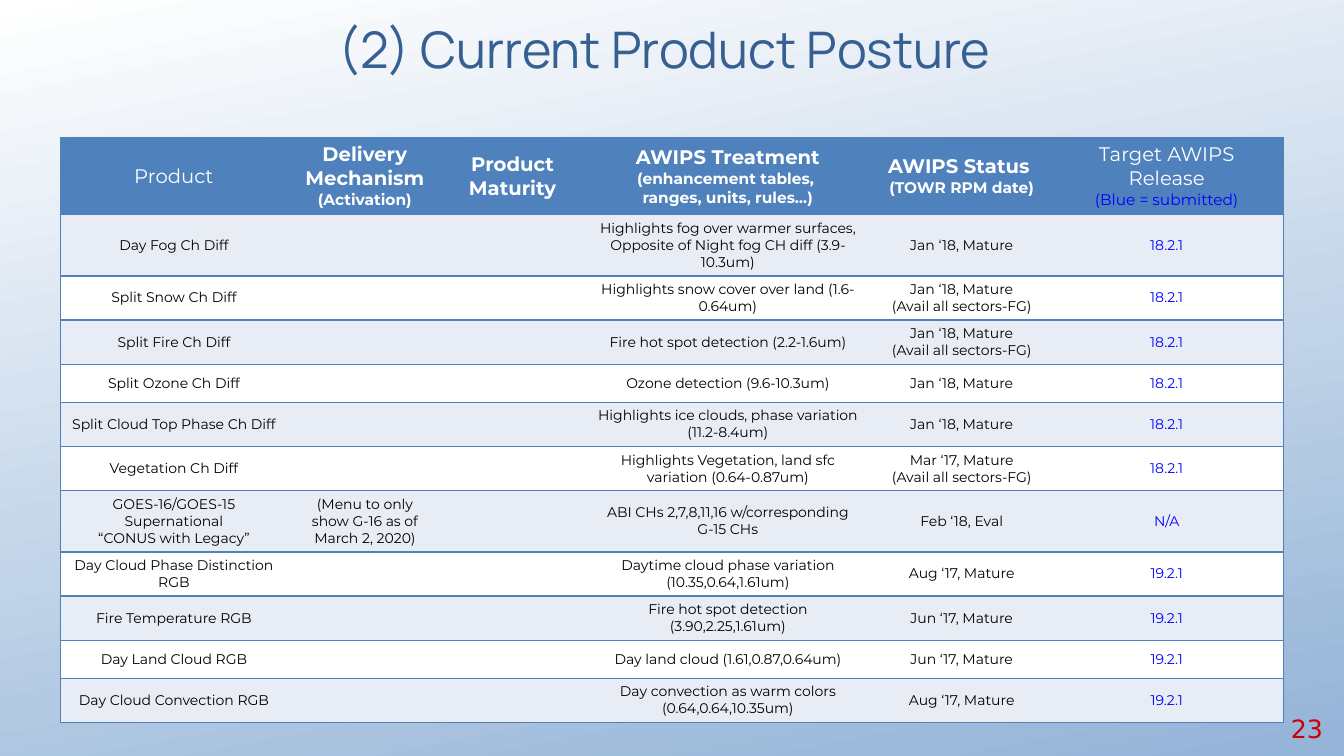
from dataclasses import dataclass

from lxml.etree import SubElement
from pptx import Presentation
from pptx.dml.color import RGBColor
from pptx.enum.text import MSO_ANCHOR, PP_ALIGN
from pptx.oxml.ns import qn
from pptx.slide import Slide
from pptx.table import Table, _Cell
from pptx.util import Pt

WHITE = RGBColor(0xFF, 0xFF, 0xFF)
BLACK = RGBColor(0, 0, 0)
BLUE = RGBColor(0x4F, 0x81, 0xBD)
PALE_BLUE = RGBColor(0xE8, 0xEC, 0xF4)
SKY_BLUE = RGBColor(0x93, 0xB3, 0xD7)
TITLE_BLUE = RGBColor(0x37, 0x60, 0x92)
SUBMITTED_BLUE = RGBColor(0, 0, 0xFF)
RED = RGBColor(0xCC, 0, 0)

TABLE_FONT = "Montserrat"
COLUMN_WIDTHS = (162, 110.9, 100.1, 207.4, 126.7, 166.3)
HEADER_HEIGHT = 55
ROW_HEIGHTS = {1: 27.4, 2: 31.4, 3: 43.8}  # by number of text lines


@dataclass
class Heading:
    main: str
    detail: str = ""
    bold: bool = True
    same_paragraph: bool = False
    detail_color: RGBColor = WHITE


@dataclass
class Product:
    name: str
    treatment: str
    status: str
    release: str
    lines: int = 2
    delivery: str = ""

    def values(self) -> tuple[str, ...]:
        return self.name, self.delivery, "", self.treatment, self.status, self.release


HEADINGS = (
    Heading("Product", bold=False),
    Heading("Delivery Mechanism", "(Activation)"),
    Heading("Product Maturity"),
    Heading("AWIPS Treatment ", "(enhancement tables, \vranges, units, rules…)",
            same_paragraph=True),
    Heading("AWIPS Status ", "(TOWR RPM date)"),
    Heading("Target AWIPS Release", "(Blue = submitted)", bold=False,
            detail_color=SUBMITTED_BLUE),
)
PRODUCTS = (
    Product("Day Fog Ch Diff",
            "Highlights fog over warmer surfaces, Opposite of Night fog CH diff (3.9-10.3um)",
            "Jan ‘18, Mature", "18.2.1", lines=3),
    Product("Split Snow Ch Diff", "Highlights snow cover over land (1.6-0.64um)",
            "Jan ‘18, Mature\n(Avail all sectors-FG)", "18.2.1"),
    Product("Split Fire Ch Diff", "Fire hot spot detection (2.2-1.6um)",
            "Jan ‘18, Mature\n(Avail all sectors-FG)", "18.2.1"),
    Product("Split Ozone Ch Diff", "Ozone detection (9.6-10.3um)",
            "Jan ‘18, Mature", "18.2.1", lines=1),
    Product("Split Cloud Top Phase Ch Diff",
            "Highlights ice clouds, phase variation (11.2-8.4um)",
            "Jan ‘18, Mature", "18.2.1"),
    Product("Vegetation Ch Diff", "Highlights Vegetation, land sfc variation (0.64-0.87um)",
            "Mar ‘17, Mature\n(Avail all sectors-FG)", "18.2.1"),
    Product("GOES-16/GOES-15 Supernational\v“CONUS with Legacy”",
            "ABI CHs 2,7,8,11,16 w/corresponding G-15 CHs", "Feb ‘18, Eval", "N/A",
            lines=3, delivery="(Menu to only show G-16 as of March 2, 2020)"),
    Product("Day Cloud Phase Distinction RGB",
            "Daytime cloud phase variation (10.35,0.64,1.61um)", "Aug ‘17, Mature", "19.2.1"),
    Product("Fire Temperature RGB", "Fire hot spot detection (3.90,2.25,1.61um)",
            "Jun ‘17, Mature", "19.2.1"),
    Product("Day Land Cloud RGB", "Day land cloud (1.61,0.87,0.64um)",
            "Jun ‘17, Mature", "19.2.1", lines=1),
    Product("Day Cloud Convection RGB",
            "Day convection as warm colors (0.64,0.64,10.35um)", "Aug ‘17, Mature", "19.2.1"),
)


def format_cell(cell: _Cell, fill: RGBColor, column: int) -> None:
    """Fill the cell and rule it above, below and on the table's outer sides."""
    cell.vertical_anchor = MSO_ANCHOR.MIDDLE
    properties = cell._tc.get_or_add_tcPr()
    ruled = {"L": column == 0, "R": column == len(COLUMN_WIDTHS) - 1, "T": True, "B": True}
    for side, visible in ruled.items():
        line = SubElement(properties, qn(f"a:ln{side}"), w=str(Pt(1)))
        if visible:
            solid = SubElement(line, qn("a:solidFill"))
            SubElement(solid, qn("a:srgbClr"), val=str(BLUE))
        else:
            SubElement(line, qn("a:noFill"))
    cell.fill.solid()
    cell.fill.fore_color.rgb = fill


def write_heading(cell: _Cell, heading: Heading) -> None:
    paragraph = cell.text_frame.paragraphs[0]
    parts = [(heading.main, 14, WHITE)]
    if heading.detail:
        parts.append((heading.detail, 11, heading.detail_color))
    for index, (text, size, color) in enumerate(parts):
        if index and not heading.same_paragraph:
            paragraph = cell.text_frame.add_paragraph()
        paragraph.alignment = PP_ALIGN.CENTER
        for line_index, line in enumerate(text.split("\v")):
            if line_index:
                paragraph.add_line_break()
            run = paragraph.add_run()
            run.text = line
            run.font.name = TABLE_FONT
            run.font.size = Pt(size)
            run.font.bold = heading.bold
            run.font.color.rgb = color


def write_value(cell: _Cell, text: str, color: RGBColor) -> None:
    cell.text_frame.text = text
    for paragraph in cell.text_frame.paragraphs:
        paragraph.alignment = PP_ALIGN.CENTER
        paragraph.font.name = TABLE_FONT
        paragraph.font.size = Pt(10)
        paragraph.font.bold = False
        paragraph.font.color.rgb = color
        if not text:  # keeps an empty cell from stretching its row
            SubElement(paragraph._p, qn("a:endParaRPr"), sz="1000")


def fill_table(table: Table) -> None:
    table.horz_banding = False
    for column, width in zip(table.columns, COLUMN_WIDTHS):
        column.width = Pt(width)
    table.rows[0].height = Pt(HEADER_HEIGHT)
    for column, heading in enumerate(HEADINGS):
        format_cell(table.cell(0, column), BLUE, column)
        write_heading(table.cell(0, column), heading)
    for row, product in enumerate(PRODUCTS, start=1):
        table.rows[row].height = Pt(ROW_HEIGHTS[product.lines])
        values = product.values()
        for column, value in enumerate(values):
            format_cell(table.cell(row, column), PALE_BLUE if row % 2 else WHITE, column)
            is_release = column == len(values) - 1
            write_value(table.cell(row, column), value, SUBMITTED_BLUE if is_release else BLACK)


def add_background(slide: Slide) -> None:
    fill = slide.background.fill
    fill.gradient()
    fill.gradient_angle = 101
    for stop, color in zip(fill.gradient_stops, (SKY_BLUE, WHITE)):
        stop.color.rgb = color


def add_title(slide: Slide) -> None:
    title = slide.shapes.title
    title.left, title.top, title.width, title.height = Pt(95.7), Pt(0), Pt(765.4), Pt(69)
    title.text_frame.text = "(2) Current Product Posture "
    title.text_frame.vertical_anchor = MSO_ANCHOR.MIDDLE
    paragraph = title.text_frame.paragraphs[0]
    paragraph.alignment = PP_ALIGN.CENTER
    paragraph.font.name = "Manrope"
    paragraph.font.size = Pt(36)
    paragraph.font.color.rgb = TITLE_BLUE


def add_page_number(slide: Slide) -> None:
    box = slide.shapes.add_textbox(Pt(908), Pt(505.5), Pt(44), Pt(29))
    box.text_frame.word_wrap = True
    box.text_frame.vertical_anchor = MSO_ANCHOR.MIDDLE
    box.text_frame.text = "23"
    paragraph = box.text_frame.paragraphs[0]
    paragraph.alignment = PP_ALIGN.RIGHT
    paragraph.font.name = "DejaVu Sans"
    paragraph.font.size = Pt(18)
    paragraph.font.color.rgb = RED


def main() -> None:
    presentation = Presentation()
    presentation.slide_width, presentation.slide_height = Pt(960), Pt(540)
    slide = presentation.slides.add_slide(presentation.slide_layouts[5])
    add_background(slide)
    add_title(slide)

    # Product table
    height = HEADER_HEIGHT + sum(ROW_HEIGHTS[product.lines] for product in PRODUCTS)
    frame = slide.shapes.add_table(len(PRODUCTS) + 1, len(COLUMN_WIDTHS), Pt(43.2), Pt(98.3),
                                   Pt(sum(COLUMN_WIDTHS)), Pt(height))
    fill_table(frame.table)
    add_page_number(slide)
    presentation.save("out.pptx")


if __name__ == "__main__":
    main()
